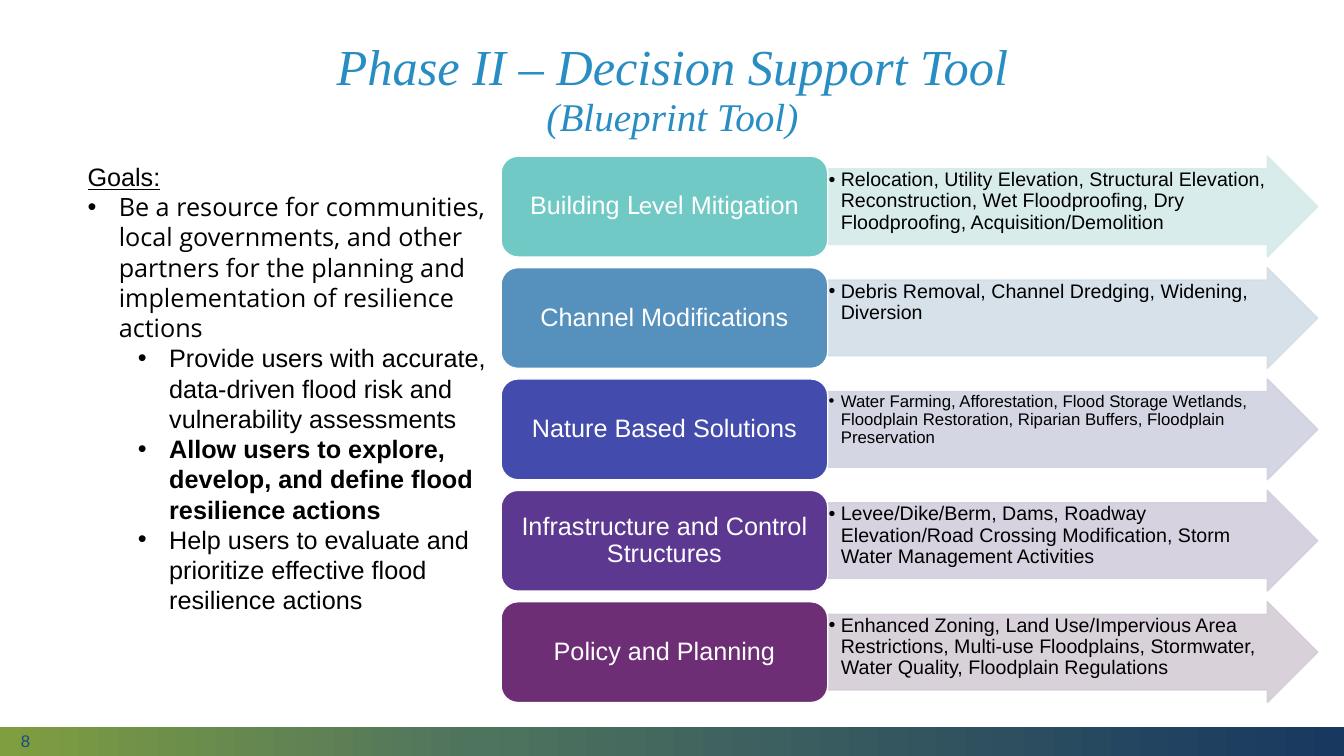
from copy import deepcopy

from lxml.etree import SubElement
from pptx import Presentation
from pptx.dml.color import RGBColor
from pptx.enum.shapes import MSO_SHAPE
from pptx.enum.text import MSO_ANCHOR, PP_ALIGN
from pptx.oxml.ns import qn
from pptx.util import Inches, Pt

COLORS = {
    "title": "288DC2", "text": "000000", "white": "FFFFFF", "number": "1F497D",
    "footer_start": "7F9E3F", "footer_middle": "4F745E", "footer_end": "183860",
}
SANS, SERIF = "Arial", "Times New Roman"

# category, its colour, arrow colour, measures, size of the measures
STRATEGIES = [
    ("Building Level Mitigation", "71C9C5", "D5EBEA",
     "Relocation, Utility Elevation, Structural Elevation, Reconstruction, "
     "Wet Floodproofing, Dry Floodproofing, Acquisition/Demolition", 14),
    ("Channel Modifications", "5691BE", "D2DEE7",
     "Debris Removal, Channel Dredging, Widening, Diversion", 14),
    ("Nature Based Solutions", "434BAC", "D0D2E2",
     "Water Farming, Afforestation, Flood Storage Wetlands, Floodplain Restoration, "
     "Riparian Buffers, Floodplain Preservation", 12),
    ("Infrastructure and Control Structures", "5C3890", "D3CEDC",
     "Levee/Dike/Berm, Dams, Roadway Elevation/Road Crossing Modification, "
     "Storm Water Management Activities", 14),
    ("Policy and Planning", "6D2E75", "D4CDD6",
     "Enhanced Zoning, Land Use/Impervious Area Restrictions, Multi-use Floodplains, "
     "Stormwater, Water Quality, Floodplain Regulations", 14),
]
GOALS = [
    "Provide users with accurate, data-driven flood risk and vulnerability assessments",
    "Allow users to explore, develop, and define flood resilience actions",
    "Help users to evaluate and prioritize effective flood resilience actions",
]
FIRST_TOP, LAST_TOP = 1.55, 5.97
ROW_STEP = (LAST_TOP - FIRST_TOP) / (len(STRATEGIES) - 1)


class SlideBuilder:
    def __init__(self, slide):
        self.slide = slide

    def font(self, target, size, color="text", name=SANS, **flags):
        """Style a run or paragraph; flags are bold, italic and underline."""
        target.font.size = Pt(size)
        target.font.name = name
        target.font.color.rgb = RGBColor.from_string(COLORS[color])
        for flag, value in flags.items():
            setattr(target.font, flag, value)

    def bullet(self, paragraph, left, hanging, level=0):
        paragraph.level = level
        properties = paragraph._p.get_or_add_pPr()
        properties.set("marL", str(Inches(left)))
        properties.set("indent", str(-Inches(hanging)))
        SubElement(properties, qn("a:buFont"), typeface=SANS)
        SubElement(properties, qn("a:buChar"), char="•")

    def frame(self, shape, anchor, horizontal=0.1, vertical=0.05):
        frame = shape.text_frame
        frame.word_wrap = True
        frame.vertical_anchor = anchor
        frame.margin_left = frame.margin_right = Inches(horizontal)
        frame.margin_top = frame.margin_bottom = Inches(vertical)
        return frame

    def text_box(self, box, anchor=MSO_ANCHOR.MIDDLE):
        return self.frame(self.slide.shapes.add_textbox(*map(Inches, box)), anchor)

    def shape(self, kind, box):
        shape = self.slide.shapes.add_shape(kind, *map(Inches, box))
        shape.shadow.inherit = False
        return shape

    def paint(self, shape, fill, line):
        shape.fill.solid()
        shape.fill.fore_color.rgb = RGBColor.from_string(fill)
        shape.line.color.rgb = RGBColor.from_string(line)
        shape.line.width = Pt(1)

    def heading(self, text, top, size):
        paragraph = self.text_box((0.92, top, 11.5, 1.16)).paragraphs[0]
        paragraph.text = text
        paragraph.alignment = PP_ALIGN.CENTER
        paragraph.line_spacing = 0.9
        self.font(paragraph.runs[0], size, "title", SERIF, italic=True)

    def footer(self, number):
        band = self.shape(MSO_SHAPE.RECTANGLE, (0, 7.21, 13.33, 0.3))
        band.line.fill.background()
        band.fill.gradient()
        band.fill.gradient_angle = 0
        stop_list = band._element.spPr.find(".//" + qn("a:gsLst"))
        stop_list.insert(1, deepcopy(stop_list[0]))
        stops = zip(band.fill.gradient_stops, (0, 0.35, 1),
                    ("footer_start", "footer_middle", "footer_end"))
        for stop, position, color in stops:
            stop.position = position
            stop.color.rgb = RGBColor.from_string(COLORS[color])
        paragraph = self.text_box((0.11, 7.27, 3, 0.15)).paragraphs[0]
        paragraph.text = number
        self.font(paragraph.runs[0], 12, "number")

    def goals(self):
        frame = self.text_box((0.77, 1.55, 4.53, 4.95), MSO_ANCHOR.TOP)
        label = frame.paragraphs[0]
        label.text = "Goals:"
        self.font(label.runs[0], 18, underline=True)
        main_goal = frame.add_paragraph()
        main_goal.text = ("Be a resource for communities, local governments, and other partners "
                          "for the planning and implementation of resilience actions")
        self.bullet(main_goal, 0.31, 0.31)
        self.font(main_goal.runs[0], 18, name="Open Sans")
        for goal in GOALS:
            paragraph = frame.add_paragraph()
            paragraph.text = goal
            self.bullet(paragraph, 0.81, 0.31, level=1)
            self.font(paragraph.runs[0], 18, bold=goal.startswith("Allow"))

    def measures_arrow(self, top, color, measures, size):
        arrow = self.shape(MSO_SHAPE.RIGHT_ARROW, (8.21, top, 4.86, 1))
        arrow.adjustments[0] = 0.75
        arrow.adjustments[1] = 0.5
        self.paint(arrow, color, color)
        for tint in arrow._element.spPr.iter(qn("a:srgbClr")):
            SubElement(tint, qn("a:alpha"), val="90000")
        paragraph = self.frame(arrow, MSO_ANCHOR.TOP, 0.01, 0.01).paragraphs[0]
        paragraph.text = measures
        paragraph.alignment = PP_ALIGN.LEFT
        paragraph.line_spacing = 0.9
        self.bullet(paragraph, 0.12, 0.12, level=1)
        self.font(paragraph, size)
        self.font(paragraph.runs[0], size)

    def category(self, top, color, name):
        card = self.shape(MSO_SHAPE.ROUNDED_RECTANGLE, (4.97, top, 3.24, 1))
        self.paint(card, color, COLORS["white"])
        paragraph = self.frame(card, MSO_ANCHOR.MIDDLE, 0.07, 0.04).paragraphs[0]
        paragraph.alignment = PP_ALIGN.CENTER
        paragraph.line_spacing = 0.9
        before, level, after = name.partition("Level")
        for part in filter(None, (before, level, after)):
            run = paragraph.add_run()
            run.text = part
            self.font(run, 18, "white", "Lato" if part == "Level" else SANS)


def main():
    presentation = Presentation()
    presentation.slide_width = Inches(13.33)
    presentation.slide_height = Inches(7.5)
    builder = SlideBuilder(presentation.slides.add_slide(presentation.slide_layouts[6]))
    builder.footer("8")
    builder.heading("Phase II – Decision Support Tool", 0.11, 36)
    builder.heading("(Blueprint Tool)", 0.6, 28)
    builder.goals()
    for row, (name, color, arrow_color, measures, size) in enumerate(STRATEGIES):
        top = FIRST_TOP + row * ROW_STEP
        builder.measures_arrow(top, arrow_color, measures, size)
        builder.category(top, color, name)
    presentation.save("out.pptx")


if __name__ == "__main__":
    main()
